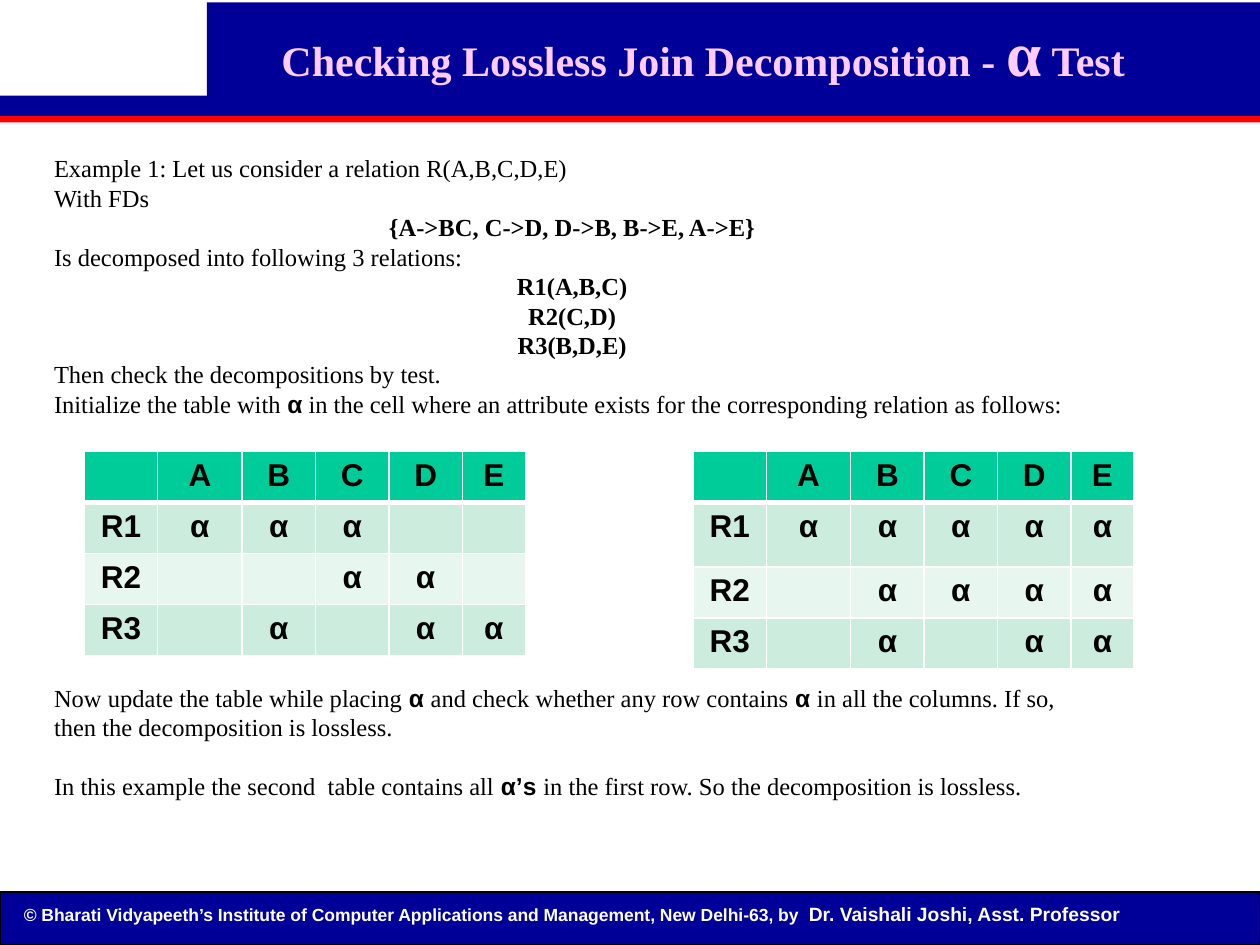
from dataclasses import dataclass

from lxml import etree
from pptx import Presentation
from pptx.dml.color import RGBColor
from pptx.enum.shapes import MSO_SHAPE
from pptx.enum.text import MSO_ANCHOR, MSO_AUTO_SIZE, PP_ALIGN
from pptx.oxml.ns import qn
from pptx.util import Cm, Pt

RECT = MSO_SHAPE.RECTANGLE
TOP, MIDDLE = MSO_ANCHOR.TOP, MSO_ANCHOR.MIDDLE
LEFT, CENTER = PP_ALIGN.LEFT, PP_ALIGN.CENTER
NO_AUTOFIT = MSO_AUTO_SIZE.NONE


@dataclass(frozen=True)
class Theme:
    serif: str = "Times New Roman"
    sans: str = "Arial"
    navy: str = "000099"
    red: str = "FF0000"
    pink: str = "FFCCFF"
    black: str = "000000"
    white: str = "FFFFFF"
    header: str = "00CC99"
    bands: tuple = ("CCECDE", "E7F6EF")
    title: int = 24
    symbol: int = 36
    body: int = 14
    line: float = 16.8
    cell: int = 18
    footer: int = 10
    author: int = 11


T = Theme()

# Bars: left, top, width, height (cm), fill, outline
BARS = [
    (0, 1.93, 25.4, 0.41, T.navy, None),
    (0, 2.34, 25.4, 0.13, T.red, None),
    (4.17, 0.05, 21.23, 1.93, T.navy, None),
    (0, 17.98, 25.4, 1.07, T.navy, T.black),
]
TITLE = [("Checking Lossless Join Decomposition - ", T.title),
         ("α", T.symbol), (" Test", T.title)]
FOOTER = [
    ("© Bharati Vidyapeeth’s Institute of Computer Applications and "
     "Management, New Delhi-63, by", T.footer),
    ("  Dr. Vaishali Joshi, Asst. Professor", T.author),
]

# Body paragraphs: blank lines above, alignment, runs of (text, style)
PLAIN, BOLD, ALPHA = (T.serif, False), (T.serif, True), (T.sans, True)
BODY = [
    (0, LEFT, [("Example 1: Let us consider a relation R(A,B,C,D,E)", PLAIN)]),
    (0, LEFT, [("With FDs", PLAIN)]),
    (0, CENTER, [("{A->BC, C->D, D->B, B->E, A->E}", BOLD)]),
    (0, LEFT, [("Is decomposed into following 3 relations:", PLAIN)]),
    (0, CENTER, [("R1(A,B,C)", BOLD)]),
    (0, CENTER, [("R2(C,D)", BOLD)]),
    (0, CENTER, [("R3(B,D,E)", BOLD)]),
    (0, LEFT, [("Then check the decompositions by test.", PLAIN)]),
    (0, LEFT, [("Initialize the table with ", PLAIN), ("α", ALPHA),
               (" in the cell where an attribute exists for the "
                "corresponding relation as follows:", PLAIN)]),
    (9, LEFT, [("Now update the table while placing ", PLAIN), ("α ", ALPHA),
               ("and check whether any row contains ", PLAIN), ("α ", ALPHA),
               ("in all the columns. If so, then the decomposition is "
                "lossless.", PLAIN)]),
    (1, LEFT, [("In this example the second  table contains all ", PLAIN),
               ("α’s ", ALPHA),
               ("in the first row. So the decomposition is lossless.", PLAIN)]),
]

# Tables: left (cm), row heights (cm), attributes marked for each relation
ATTRIBUTES = "ABCDE"
COLUMNS = [1.48, 1.7, 1.48, 1.48, 1.48, 1.27]
TABLE_TOP = 9.1
TABLES = [
    (1.7, [1.03, 1.03, 1.03, 1.03], {"R1": "ABC", "R2": "CD", "R3": "BDE"}),
    (13.97, [1.03, 1.3, 1.03, 1.03],
     {"R1": "ABCDE", "R2": "BCDE", "R3": "BDE"}),
]


def color(value):
    return RGBColor.from_string(value)


def add_run(p, text, size, font, fill, bold=True):
    r = p.add_run()
    r.text = text
    r.font.size, r.font.name, r.font.bold = Pt(size), font, bold
    r.font.color.rgb = color(fill)


def setup_frame(sp, anchor):
    tf = sp.text_frame
    tf.word_wrap, tf.auto_size, tf.vertical_anchor = True, NO_AUTOFIT, anchor
    return tf


def add_bar(s, left, top, width, height, fill, outline):
    sp = s.shapes.add_shape(RECT, Cm(left), Cm(top), Cm(width), Cm(height))
    sp.shadow.inherit = False
    sp.fill.solid()
    sp.fill.fore_color.rgb = color(fill)
    if outline:
        sp.line.color.rgb = color(outline)
        sp.line.width = Pt(0.75)
    else:
        sp.line.fill.background()


def add_title(s):
    sp = s.shapes.title
    s.shapes.element.append(sp.element)  # bring in front of the bars
    sp.left, sp.top, sp.width, sp.height = Cm(3.38), Cm(0), Cm(21.59), Cm(3.18)
    tf = setup_frame(sp, TOP)
    tf.margin_top = Cm(0.28)
    p = tf.paragraphs[0]
    p.alignment = CENTER
    for text, size in TITLE:
        add_run(p, text, size, T.serif, T.pink)


def add_footer(s):
    sp = s.shapes.add_textbox(Cm(0.23), Cm(18.06), Cm(24.33), Cm(0.74))
    p = setup_frame(sp, MIDDLE).paragraphs[0]
    for text, size in FOOTER:
        add_run(p, text, size, T.sans, T.white)


def add_body(s):
    sp = s.shapes.add_textbox(Cm(0.84), Cm(2.97), Cm(21.39), Cm(15.21))
    tf = setup_frame(sp, TOP)
    for i, (blank_lines, align, runs) in enumerate(BODY):
        p = tf.add_paragraph() if i else tf.paragraphs[0]
        p.alignment = align
        p.line_spacing = Pt(T.line)
        if blank_lines:
            p.space_before = Pt(blank_lines * T.line)
        for text, (font, bold) in runs:
            add_run(p, text, T.body, font, T.black, bold)


def set_borders(cell, bottom):
    """Draw white borders; must run before the cell gets its fill."""
    tc_pr = cell._tc.get_or_add_tcPr()
    for tag, width in (("lnL", 1), ("lnR", 1), ("lnT", 1), ("lnB", bottom)):
        ln = etree.SubElement(tc_pr, qn("a:" + tag), w=str(Pt(width)))
        solid = etree.SubElement(ln, qn("a:solidFill"))
        etree.SubElement(solid, qn("a:srgbClr"), val=T.white)


def add_alpha_table(s, left, heights, relations):
    rows = [["", *ATTRIBUTES]]
    for name, marked in relations.items():
        rows.append([name, *("α" if a in marked else "" for a in ATTRIBUTES)])
    table = s.shapes.add_table(
        len(rows), len(COLUMNS), Cm(left), Cm(TABLE_TOP),
        Cm(sum(COLUMNS)), Cm(sum(heights))).table
    for column, width in zip(table.columns, COLUMNS):
        column.width = Cm(width)
    for i, (texts, height) in enumerate(zip(rows, heights)):
        table.rows[i].height = Cm(height)
        for j, text in enumerate(texts):
            cell = table.cell(i, j)
            set_borders(cell, 1 if i else 3)
            cell.fill.solid()
            cell.fill.fore_color.rgb = color(
                T.bands[(i - 1) % 2] if i else T.header)
            if text:
                p = cell.text_frame.paragraphs[0]
                p.alignment = CENTER
                add_run(p, text, T.cell, T.sans, T.black)


def main():
    prs = Presentation()
    prs.slide_width, prs.slide_height = Cm(25.4), Cm(19.05)
    s = prs.slides.add_slide(prs.slide_layouts[5])
    for bar in BARS:
        add_bar(s, *bar)
    add_footer(s)
    add_title(s)
    add_body(s)
    for table in TABLES:
        add_alpha_table(s, *table)
    prs.save("out.pptx")


if __name__ == "__main__":
    main()
